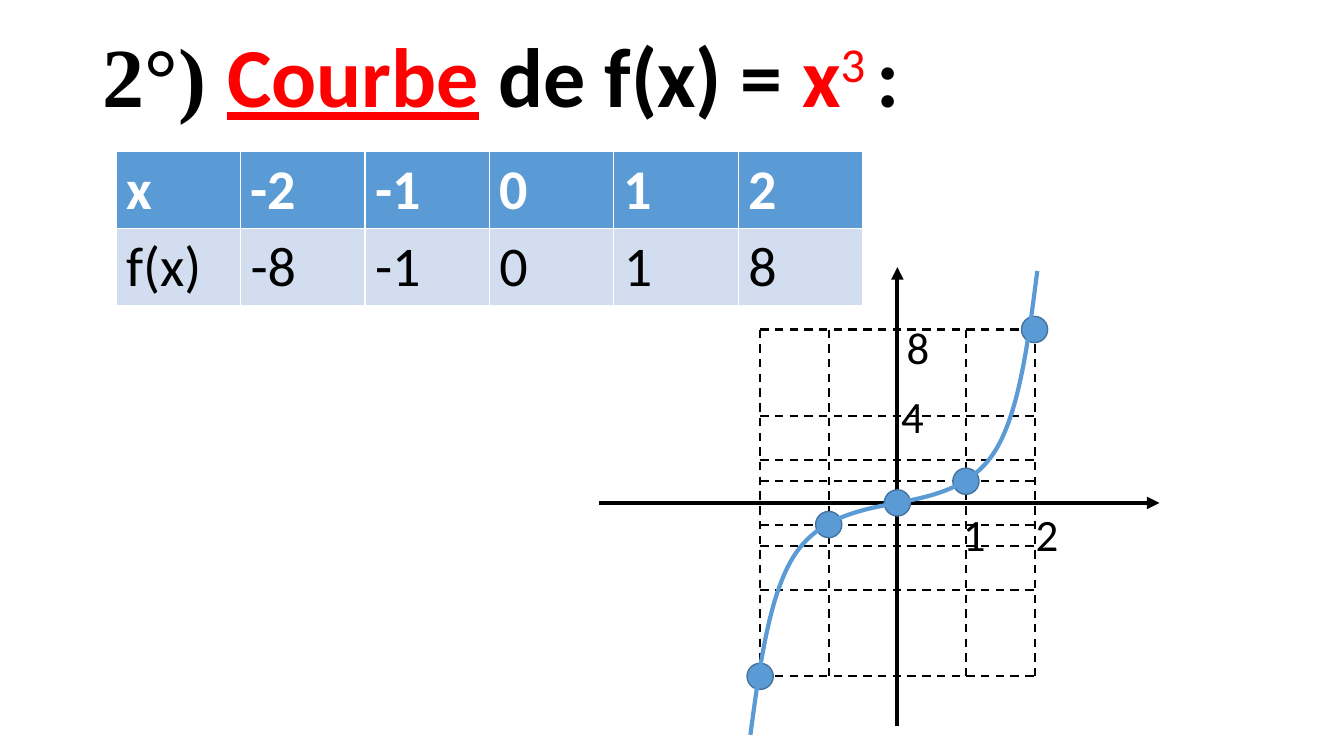
from lxml.etree import SubElement
from pptx import Presentation
from pptx.dml.color import RGBColor
from pptx.enum.dml import MSO_LINE_DASH_STYLE as Dash
from pptx.enum.shapes import MSO_CONNECTOR as Connector, MSO_SHAPE as Shape
from pptx.enum.text import MSO_ANCHOR as Anchor, PP_ALIGN as Align
from pptx.oxml.ns import qn
from pptx.util import Inches, Pt

WIDTH, HEIGHT = 13.33, 7.5
BLACK, WHITE, RED = "000000", "FFFFFF", "FF0000"
BLUE, DARK_BLUE, PALE_BLUE = "5B9BD5", "43739E", "D2DEEF"

# Extent of the axes, in units of x and f(x)
X_MIN, X_MAX, Y_MIN, Y_MAX = -4.35, 3.82, -10.28, 10.88
GRID_X = (-2, -1, 1, 2)
GRID_Y = (8, 4, 2, 1, -1, -2, -4, -8)
LABELS = {"8": (0.3, 7.2), "4": (0.22, 4.05), "1": (1.12, -1.4), "2": (2.18, -1.4)}
# Two Bézier pieces of the right half, starting at the origin
BRANCH = [
    [(0, 0), (0.54, 0.33), (1.1, 0.7), (1.44, 2.47)],
    [(1.44, 2.47), (1.78, 4.28), (1.91, 7.49), (2.04, 10.7)],
]
BRANCH_SCALES = ((1, 1), (-1.05, -1))
CURVE_STEPS = 24


def cube(x):
    return x ** 3


def color(value):
    return RGBColor.from_string(value)


def write(para, text, **formats):
    """Add a span; formats are font attributes, plus ink for the colour."""
    span = para.add_run()
    span.text = text
    span.font.color.rgb = color(formats.pop("ink", BLACK))
    for name, value in {"name": "Calibri", **formats}.items():
        setattr(span.font, name, value)
    return span


def add_text_box(page, box, **formats):
    """Add an empty text box and return its first paragraph."""
    frame = page.shapes.add_textbox(*map(Inches, box)).text_frame
    for name, value in {"word_wrap": True, **formats}.items():
        setattr(frame, name, value)
    return frame.paragraphs[0]


def add_line(page, start, end, width, dashed=False, arrow=False):
    line = page.shapes.add_connector(Connector.STRAIGHT, *map(Inches, start + end))
    line.line.color.rgb = color(BLACK)
    line.line.width = Pt(width)
    if dashed:
        line.line.dash_style = Dash.DASH
    if arrow:
        SubElement(line.get_or_add_ln(), qn("a:tailEnd"), type="triangle")
    SubElement(line.element.spPr, qn("a:effectLst"))


def add_title(page, box):
    para = add_text_box(page, box, vertical_anchor=Anchor.MIDDLE)
    para.line_spacing = 0.9
    strong = {"size": Pt(60), "bold": True}
    write(para, "2°) ", **{**strong, "name": "Times New Roman"})
    write(para, "Courbe", ink=RED, underline=True, **strong)
    write(para, " de f(x) = ", **strong)
    write(para, "x", ink=RED, **strong)
    exponent = write(para, "3 ", ink=RED, size=Pt(60), bold=False)
    exponent.font._element.set("baseline", "30000")
    write(para, ":", **strong)


def add_value_table(page, box):
    inputs = range(-2, 3)
    rows = [["x", *inputs], ["f(x)", *map(cube, inputs)]]
    styles = [(BLUE, WHITE, True), (PALE_BLUE, BLACK, False)]
    table = page.shapes.add_table(len(rows), len(rows[0]), *map(Inches, box)).table
    table.horz_banding = False
    for r, (values, (fill, ink, bold)) in enumerate(zip(rows, styles)):
        for c, value in enumerate(values):
            cell = table.cell(r, c)
            cell.fill.solid()
            cell.fill.fore_color.rgb = color(fill)
            para = cell.text_frame.paragraphs[0]
            write(para, str(value), ink=ink, size=Pt(40), bold=bold)


def bezier(points, t):
    weights = ((1 - t) ** 3, 3 * t * (1 - t) ** 2, 3 * t * t * (1 - t), t ** 3)
    return tuple(sum(w * p[axis] for w, p in zip(weights, points)) for axis in (0, 1))


def add_plot(page, box):
    """Draw axes, grid, labels, points and curve of the cube in the box."""
    left, top, width, height = box

    def place(x, y):
        return (left + width * (x - X_MIN) / (X_MAX - X_MIN),
                top + height * (Y_MAX - y) / (Y_MAX - Y_MIN))

    def around(x, y, side):
        """Box of the given size centred on a point of the plot."""
        across, down = place(x, y)
        return across - side / 2, down - side / 2, side, side

    add_line(page, place(X_MIN, 0), place(X_MAX, 0), 3, arrow=True)
    add_line(page, place(0, Y_MIN), place(0, Y_MAX), 3, arrow=True)
    for x in GRID_X:
        add_line(page, place(x, GRID_Y[0]), place(x, GRID_Y[-1]), 1.5, dashed=True)
    for y in GRID_Y:
        add_line(page, place(GRID_X[0], y), place(GRID_X[-1], y), 1.5, dashed=True)

    margins = dict.fromkeys(
        ("margin_left", "margin_right", "margin_top", "margin_bottom"), 0)
    for text, (x, y) in LABELS.items():
        para = add_text_box(page, around(x, y, 0.54),
                            vertical_anchor=Anchor.MIDDLE, **margins)
        para.alignment = Align.CENTER
        write(para, text, size=Pt(32))

    for x in range(-2, 3):
        point = page.shapes.add_shape(
            Shape.OVAL, *map(Inches, around(x, cube(x), 0.26)))
        point.shadow.inherit = False
        point.fill.solid()
        point.fill.fore_color.rgb = color(BLUE)
        point.line.color.rgb = color(DARK_BLUE)
        point.line.width = Pt(1)

    for scale_x, scale_y in BRANCH_SCALES:
        spots = [bezier(piece, step / CURVE_STEPS)
                 for piece in BRANCH for step in range(CURVE_STEPS + 1)]
        path_points = [tuple(map(Inches, place(x * scale_x, y * scale_y)))
                       for x, y in spots]
        builder = page.shapes.build_freeform(*path_points[0])
        builder.add_line_segments(path_points[1:], close=False)
        curve = builder.convert_to_shape()
        curve.shadow.inherit = False
        curve.fill.background()
        curve.line.color.rgb = color(BLUE)
        curve.line.width = Pt(3)


def main():
    deck = Presentation()
    deck.slide_width, deck.slide_height = Inches(WIDTH), Inches(HEIGHT)
    page = deck.slides.add_slide(deck.slide_layouts[6])
    add_title(page, (0.92, 0.4, 11.5, 0.8))
    add_value_table(page, (1.15, 1.5, 7.41, 1.53))
    add_plot(page, (5.94, 2.65, 5.56, 4.55))
    deck.save("out.pptx")


if __name__ == "__main__":
    main()
